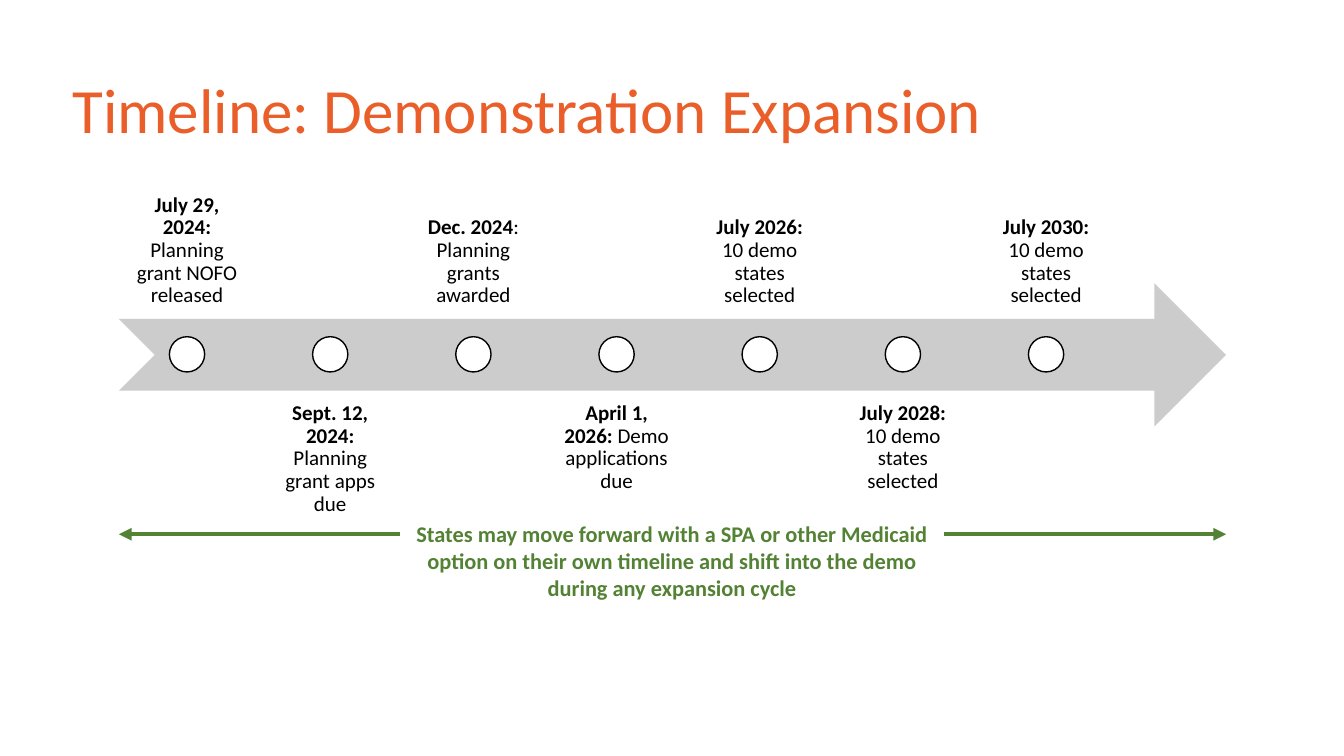
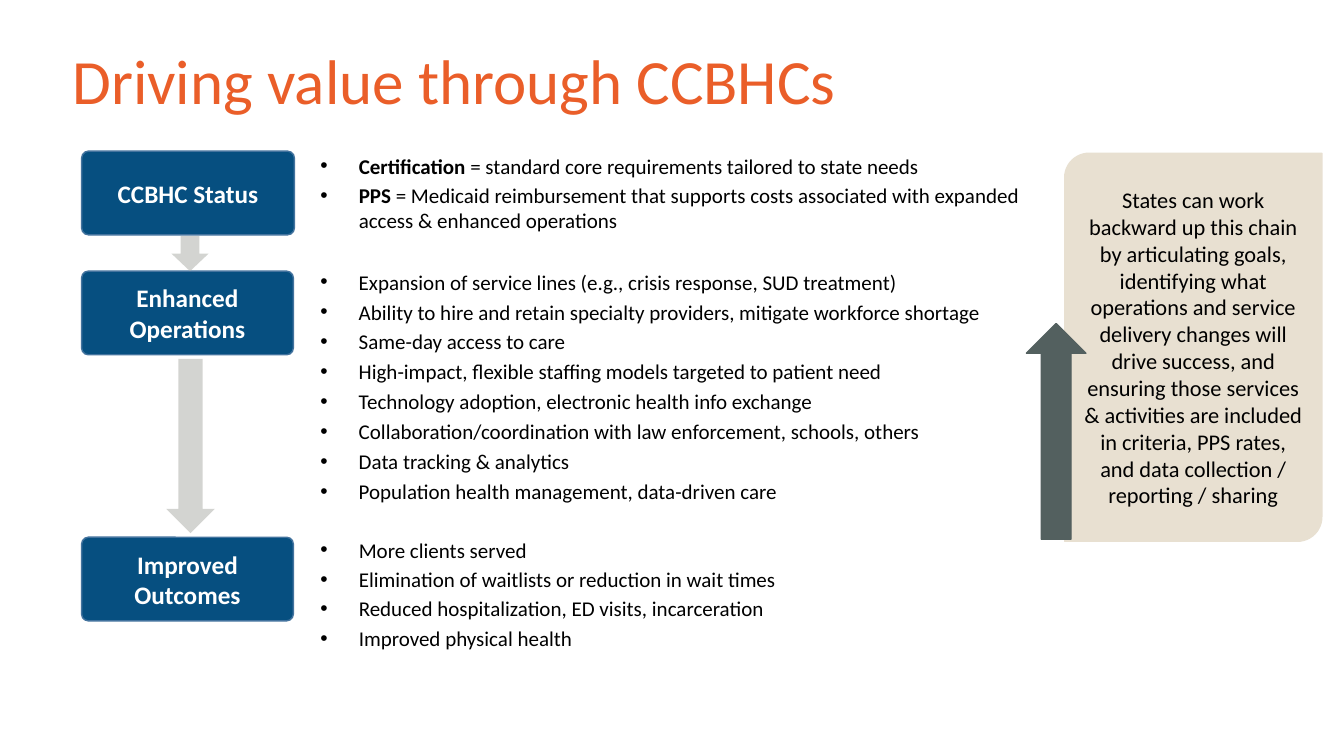
"""Build two slides on the demonstration timeline and its value chain."""
import pptx
import pptx.dml.color
import pptx.enum.dml
import pptx.enum.shapes
import pptx.enum.text
import pptx.oxml.ns
import pptx.util
from lxml import etree

Inches = pptx.util.Inches
Pt = pptx.util.Pt
SHAPE = pptx.enum.shapes.MSO_SHAPE
ALIGN = pptx.enum.text.PP_ALIGN
ANCHOR = pptx.enum.text.MSO_ANCHOR
qn = pptx.oxml.ns.qn

FONT = "Calibri"
ORANGE, GREEN, NAVY, EDGE = "EA5E29", "548235", "064F80", "43739E"
SILVER, ASH, SLATE, SAND = "CCCCCC", "A9ABA4", "53605F", "E8E0D1"
BLACK, WHITE = "000000", "FFFFFF"

EVENTS = [
    ("July 29, 2024: ", "Planning grant NOFO released"),
    ("Sept. 12, 2024: ", "Planning grant apps due"),
    ("Dec. 2024", ": Planning grants awarded"),
    ("April 1, 2026: ", "Demo applications due"),
    ("July 2026: ", "10 demo states selected"),
    ("July 2028: ", "10 demo states selected"),
    ("July 2030: ", "10 demo states selected"),
]
STATUS = [
    ("Certification", " = standard core requirements tailored to state needs"),
    ("PPS ", "= Medicaid reimbursement that supports costs associated with "
     "expanded access & enhanced operations"),
]
CHANGES = [
    "Expansion of service lines (e.g., crisis response, SUD treatment)",
    "Ability to hire and retain specialty providers, mitigate workforce shortage",
    "Same-day access to care",
    "High-impact, flexible staffing models targeted to patient need",
    "Technology adoption, electronic health info exchange",
    "Collaboration/coordination with law enforcement, schools, others",
    "Data tracking & analytics",
    "Population health management, data-driven care",
]
RESULTS = [
    "More clients served",
    "Elimination of waitlists or reduction in wait times",
    "Reduced hospitalization, ED visits, incarceration",
    "Improved physical health",
]
STAGES = [
    ("CCBHC Status", 1.5, 2.11),
    ("Enhanced Operations", 2.69, 2.1),
    ("Improved Outcomes", 5.33, 2.1),
]
LISTS = [
    (STATUS, 1.47, 7.38, 1.01, 3),
    (CHANGES, 2.62, 7.1, 2.75, 3.4),
    (RESULTS, 5.28, 5.21, 1.31, 3),
]


def rgb(code):
    """Turn a hex string into a colour."""
    return pptx.dml.color.RGBColor.from_string(code)


def mark(para):
    """Give a paragraph a hanging round bullet."""
    props = para._p.get_or_add_pPr()
    props.set("marL", str(Inches(0.38)))
    props.set("indent", str(Inches(-0.38)))
    etree.SubElement(props, qn("a:buFont"), typeface="Arial")
    etree.SubElement(props, qn("a:buChar"), char="•")


def write(shape, paras, size=15, color=BLACK, bold=False, align=ALIGN.LEFT,
          anchor=ANCHOR.TOP, lead=None, gap=0, bullet=False, inset=None):
    """Write paragraphs, each a string or a (bold, plain) pair."""
    frame = shape.text_frame
    frame.word_wrap = True
    frame.vertical_anchor = anchor
    if inset is not None:
        frame.margin_left = frame.margin_right = Inches(inset)
        frame.margin_top = frame.margin_bottom = Inches(inset)
    for i, item in enumerate(paras):
        para = frame.add_paragraph() if i else frame.paragraphs[0]
        if bullet:
            mark(para)
        para.alignment = align
        if lead:
            para.line_spacing = lead
        if i and gap:
            para.space_before = Pt(gap)
        parts = [(item, bold)] if isinstance(item, str) else zip(item, (True, False))
        for words, heavy in parts:
            run = para.add_run()
            run.text = words
            run.font.name = FONT
            run.font.size = Pt(size)
            run.font.bold = heavy
            run.font.color.rgb = rgb(color)


def text(slide, at, paras, **style):
    """Add a text box."""
    write(slide.shapes.add_textbox(*map(Inches, at)), paras, **style)


def block(slide, kind, at, fill, line=None, adjust=(), alpha=None):
    """Add a filled preset shape."""
    shape = slide.shapes.add_shape(kind, *map(Inches, at))
    shape.shadow.inherit = False
    shape.fill.solid()
    shape.fill.fore_color.rgb = rgb(fill)
    if alpha:
        tint = shape._element.spPr.find(qn("a:solidFill"))[0]
        etree.SubElement(tint, qn("a:alpha"), val=str(alpha * 1000))
    if line:
        shape.line.color.rgb = rgb(line)
        shape.line.width = Pt(1)
    else:
        shape.line.fill.background()
    for i, value in enumerate(adjust):
        shape.adjustments[i] = value
    return shape


def arrow(slide, start, end, y):
    """Add a level green line with a head at its end."""
    kind = pptx.enum.shapes.MSO_CONNECTOR.STRAIGHT
    link = slide.shapes.add_connector(kind, *map(Inches, (start, y, end, y)))
    link.line.color.rgb = rgb(GREEN)
    link.line.width = Pt(3)
    etree.SubElement(link.line._get_or_add_ln(), qn("a:tailEnd"), type="triangle")
    etree.SubElement(link._element.spPr, qn("a:effectLst"))


def page(deck, title, top, height):
    """Add a blank slide with the shared title style."""
    slide = deck.slides.add_slide(deck.slide_layouts[6])
    text(slide, (0.62, top, 12.1, height), [title], size=45, color=ORANGE,
         anchor=ANCHOR.MIDDLE, lead=0.9)
    return slide


def dates(deck):
    """Build the timeline slide."""
    slide = page(deck, "Timeline: Demonstration Expansion", 0.4, 1.45)
    left, right, step, dot = 1.18, 12.16, 1.42, 0.35
    block(slide, SHAPE.NOTCHED_RIGHT_ARROW, (left, 2.81, right - left, step), SILVER)
    for i, event in enumerate(EVENTS):
        x = left + i * step
        top, anchor = (3.87, ANCHOR.TOP) if i % 2 else (1.75, ANCHOR.BOTTOM)
        text(slide, (x, top, 1.35, step), [event], align=ALIGN.CENTER,
             anchor=anchor, lead=0.9, inset=0.12)
        block(slide, SHAPE.OVAL, (x + 0.5, 3.34, dot, dot), WHITE, BLACK)
    note, width = 3.97, 5.39
    text(slide, (note, 5.11, width, 0.91),
         ["States may move forward with a SPA or other Medicaid option on their "
          "own timeline and shift into the demo during any expansion cycle"],
         size=16, color=GREEN, bold=True, align=ALIGN.CENTER)
    arrow(slide, note, left, 5.3)
    arrow(slide, note + width, right, 5.3)


def value(deck):
    """Build the value chain slide."""
    slide = page(deck, "Driving value through CCBHCs", 0.14, 1.38)
    panel = block(slide, SHAPE.ROUND_2_DIAG_RECTANGLE, (10.56, 1.52, 2.55, 3.85),
                  SAND, SAND, (0.095, 0))
    write(panel, ["States can work backward up this chain by articulating goals, "
                  "identifying what operations and service delivery changes will "
                  "drive success, and ensuring those services & activities are "
                  "included in criteria, PPS rates, and data collection / "
                  "reporting / sharing"],
          size=16, align=ALIGN.CENTER, anchor=ANCHOR.MIDDLE)
    for name, top, width in STAGES:
        stage = block(slide, SHAPE.ROUNDED_RECTANGLE, (0.81, top, width, 0.83),
                      NAVY, EDGE, (0.08,))
        write(stage, [name], size=18, color=WHITE, bold=True,
              align=ALIGN.CENTER, anchor=ANCHOR.MIDDLE)
    for items, top, width, height, gap in LISTS:
        text(slide, (3.08, top, width, height), items, gap=gap, bullet=True)
    for at in ((1.7, 2.34, 0.37, 0.35), (1.65, 3.56, 0.48, 1.73)):
        block(slide, SHAPE.DOWN_ARROW, at, ASH, alpha=50)
    block(slide, SHAPE.UP_ARROW, (10.18, 3.21, 0.59, 2.14), SLATE, SLATE)


def main():
    """Build and save the deck."""
    deck = pptx.Presentation()
    deck.slide_width, deck.slide_height = Inches(13.33), Inches(7.5)
    dates(deck)
    value(deck)
    deck.save("out.pptx")


if __name__ == "__main__":
    main()
